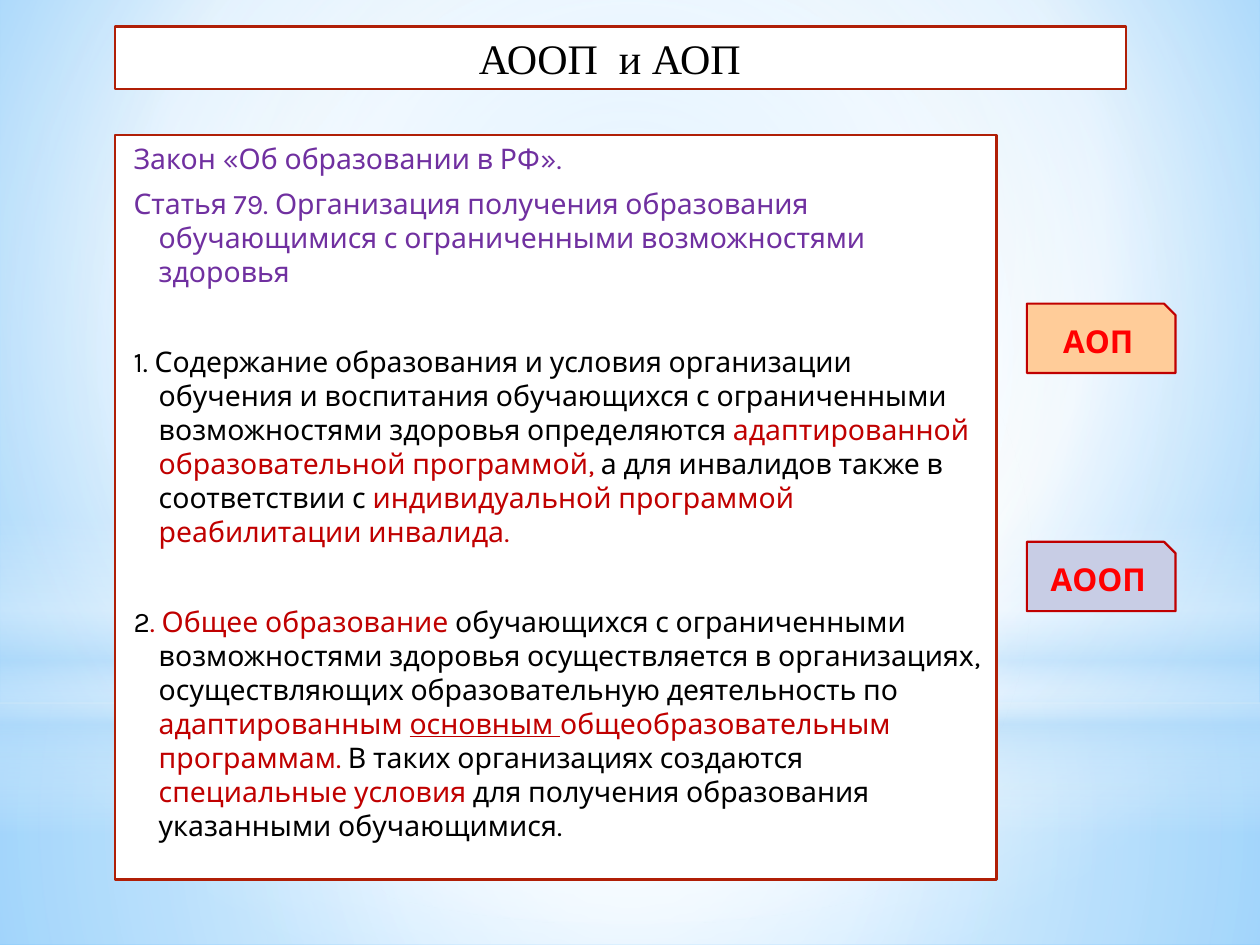
from pptx import Presentation
from pptx.dml.color import RGBColor
from pptx.enum.shapes import MSO_SHAPE
from pptx.enum.text import MSO_ANCHOR, MSO_AUTO_SIZE, PP_ALIGN
from pptx.oxml import parse_xml
from pptx.oxml.ns import nsdecls
from pptx.util import Inches, Pt

BLACK = RGBColor(0x00, 0x00, 0x00)
WHITE = RGBColor(0xFF, 0xFF, 0xFF)
VIOLET = RGBColor(0x70, 0x30, 0xA0)
CRIMSON = RGBColor(0xC0, 0x00, 0x00)
RED = RGBColor(0xFF, 0x00, 0x00)
RUST = RGBColor(0xB0, 0x1F, 0x07)
PEACH = RGBColor(0xFF, 0xCC, 0x99)
LILAC = RGBColor(0xC8, 0xCD, 0xE5)

# Content: each paragraph is a gap before it and its runs (text, colour, underline)
TITLE = "АООП  и АОП"
TEXT = [
    (3.2, [("Закон «Об образовании в РФ».", VIOLET, False)]),
    (3.2, [("Статья 79. Организация получения образования обучающимися "
            "с ограниченными возможностями здоровья", VIOLET, False)]),
    (29, [
        ("1. Содержание образования и условия организации обучения и воспитания "
         "обучающихся с ограниченными возможностями здоровья определяются ", BLACK, False),
        ("адаптированной образовательной программой,", CRIMSON, False),
        (" а для инвалидов также в соответствии с ", BLACK, False),
        ("индивидуальной программой реабилитации инвалида.", CRIMSON, False),
    ]),
    (29, [
        ("2", BLACK, False),
        (". Общее образование ", CRIMSON, False),
        ("обучающихся с ограниченными возможностями здоровья осуществляется "
         "в организациях, осуществляющих образовательную деятельность по ", BLACK, False),
        ("адаптированным ", CRIMSON, False),
        ("основным ", CRIMSON, True),
        ("общеобразовательным программам. ", CRIMSON, False),
        ("В таких организациях создаются ", BLACK, False),
        ("специальные условия ", CRIMSON, False),
        ("для получения образования указанными обучающимися.", BLACK, False),
    ]),
]
TAGS = [("АОП", 2.41, PEACH), ("АООП", 4.3, LILAC)]

# Backdrop: gradient stops are (position %, colour, opacity %)
ROUND = '<a:path path="circle"><a:fillToRect l="{}" t="{}" r="{}" b="{}"/></a:path>'
CENTRE = ROUND.format(50000, 50000, 50000, 50000)
DOWN = '<a:lin ang="5400000" scaled="0"/>'
SKY = [(0, "9ED5FF", 100), (60, "FFFFFF", 100), (100, "5BB9FF", 100)]
GLOWS = [
    (MSO_SHAPE.RECTANGLE, 5.58, 1.92, CENTRE,
     [(0, "FFFFFF", 91), (37, "FFFFFF", 76), (100, "B4DCFA", 79)]),
    (MSO_SHAPE.RECTANGLE, 0, 5.58, CENTRE,
     [(0, "FFFFFF", 89), (48, "FFFFFF", 62), (100, "B4DCFA", 79)]),
    (MSO_SHAPE.RECTANGLE, 4.12, 2.5, DOWN,
     [(0, "FFFFFF", 0), (29, "FFFFFF", 30), (45, "B4DCFA", 40),
      (55, "FFFFFF", 26), (65, "B4DCFA", 60), (100, "FFFFFF", 0)]),
    (MSO_SHAPE.OVAL, 1.75, 5.58, CENTRE,
     [(0, "FFFFFF", 100), (56, "FFFFFF", 0)]),
]


def shade(owner, fill, stops, kind):
    """Swap the owner's plain fill for a gradient."""
    fill.solid()
    fill.fore_color.rgb = WHITE
    plain = owner.element.xpath(".//a:solidFill")[0]
    marks = "".join(
        f'<a:gs pos="{pos * 1000}"><a:srgbClr val="{tone}">'
        f'<a:alpha val="{alpha * 1000}"/></a:srgbClr></a:gs>'
        for pos, tone, alpha in stops)
    grad = parse_xml(f'<a:gradFill {nsdecls("a")} rotWithShape="1">'
                     f'<a:gsLst>{marks}</a:gsLst>{kind}</a:gradFill>')
    plain.getparent().replace(plain, grad)


def frame(shape, box, fill, line):
    """Place a shape and give it a flat fill and an outline."""
    shape.left, shape.top, shape.width, shape.height = map(Inches, box)
    shape.fill.solid()
    shape.fill.fore_color.rgb = fill
    shape.line.color.rgb = line
    shape.line.width = Pt(1.25)


def style(run, face, size, tone, bold=False):
    run.font.name, run.font.size, run.font.bold = face, Pt(size), bold
    run.font.color.rgb = tone


deck = Presentation()
deck.slide_width, deck.slide_height = Inches(10), Inches(7.5)
slide = deck.slides.add_slide(deck.slide_layouts[1])
shapes = slide.shapes

# Background, with the glows behind the placeholders
shade(slide, slide.background.fill, SKY, ROUND.format(20000, 10000, 20000, 60000))
for i, (form, top, high, kind, stops) in enumerate(GLOWS):
    glow = shapes.add_shape(form, 0, Inches(top), Inches(10), Inches(high))
    glow.shadow.inherit = False
    glow.line.fill.background()
    shade(glow, glow.fill, stops, kind)
    shapes.element.insert(2 + i, glow.element)

# Title, set slightly left of centre
title = shapes.title
frame(title, (0.91, 0.21, 8.03, 0.5), WHITE, RUST)
title.text_frame.text = TITLE
title.text_frame.auto_size = MSO_AUTO_SIZE.NONE
title.text_frame.vertical_anchor = MSO_ANCHOR.MIDDLE
title.text_frame.margin_right = Inches(0.27)
head = title.text_frame.paragraphs[0]
head.alignment = PP_ALIGN.CENTER
style(head.runs[0], "Times New Roman", 24, BLACK)

# Law text with hanging indents
body = slide.placeholders[1]
frame(body, (0.91, 1.07, 7, 5.91), WHITE, RUST)
words = body.text_frame
words.auto_size = MSO_AUTO_SIZE.NONE
words.vertical_anchor = MSO_ANCHOR.TOP
for i, (gap, runs) in enumerate(TEXT):
    para = words.add_paragraph() if i else words.paragraphs[0]
    para.space_before, para.space_after = Pt(gap), Pt(3)
    props = para._p.get_or_add_pPr()
    props.set("marL", str(Inches(0.25)))
    props.set("indent", str(Inches(-0.2)))
    props.append(parse_xml(f'<a:buNone {nsdecls("a")}/>'))
    for text, tone, under in runs:
        run = para.add_run()
        run.text = text
        style(run, "Karla", 16.2, tone)
        run.font.underline = under

# Tags on the right
for text, top, fill in TAGS:
    box = (8.15, top, 1.18, 0.55)
    tag = shapes.add_shape(MSO_SHAPE.SNIP_1_RECTANGLE, *map(Inches, box))
    tag.shadow.inherit = False
    frame(tag, box, fill, CRIMSON)
    tag.text_frame.text = text
    tag.text_frame.vertical_anchor = MSO_ANCHOR.MIDDLE
    label = tag.text_frame.paragraphs[0]
    label.alignment = PP_ALIGN.CENTER
    style(label.runs[0], "Karla", 18, RED, bold=True)

deck.save("out.pptx")
